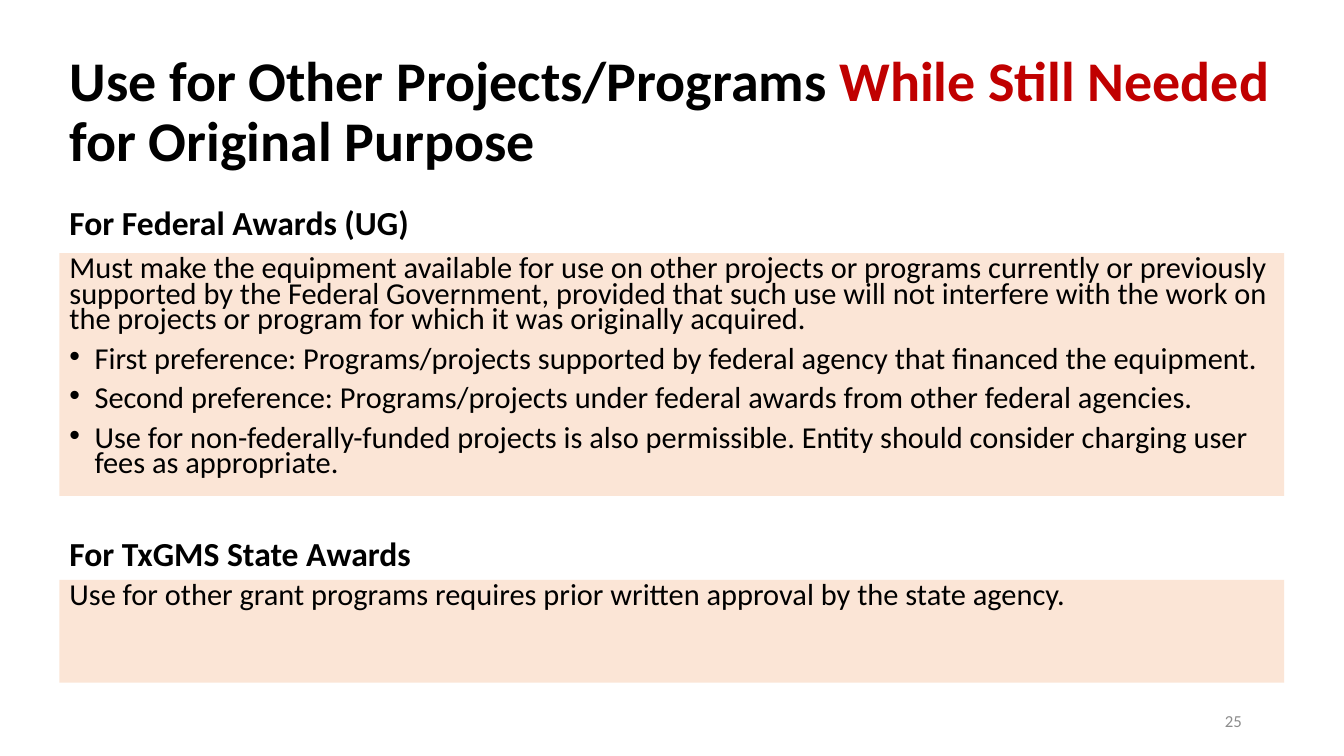
from pptx import Presentation
from pptx.dml.color import RGBColor
from pptx.enum.shapes import MSO_SHAPE as Shape
from pptx.enum.text import MSO_ANCHOR as Anchor, MSO_AUTO_SIZE as AutoSize, PP_ALIGN as Align
from pptx.oxml.ns import qn
from pptx.util import Cm, Pt
from lxml.etree import SubElement

BLACK, RED, GREY, PEACH = "000000", "C00000", "8C8C8C", "FBE5D6"
LEFT, WIDTH, HEADING_WIDTH = Cm(1.5), Cm(30.86), Cm(14.33)
INDENT = Cm(0.635)

FEDERAL_RULES = [
    "Must make the equipment available for use on other projects or programs "
    "currently or previously supported by the Federal Government, provided that "
    "such use will not interfere with the work on the projects or program for "
    "which it was originally acquired.",
    "• First preference: Programs/projects supported by federal agency that "
    "financed the equipment.",
    "• Second preference: Programs/projects under federal awards from other "
    "federal agencies.",
    "• Use for non-federally-funded projects is also permissible. Entity should "
    "consider charging user fees as appropriate.",
]
STATE_RULES = [
    "Use for other grant programs requires prior written approval by the state agency.",
]


def rgb(colour):
    return RGBColor.from_string(colour)


def add_run(paragraph, text, size=21.7, colour=BLACK, bold=False):
    run = paragraph.add_run()
    run.text = text
    run.font.name = "Calibri"
    run.font.size = Pt(size)
    run.font.bold = bold
    run.font.color.rgb = rgb(colour)


def set_bullet(paragraph):
    properties = paragraph._p.get_or_add_pPr()
    properties.set("marL", str(INDENT))
    properties.set("indent", str(-INDENT))
    SubElement(properties, qn("a:buFont")).set("typeface", "Arial")
    SubElement(properties, qn("a:buChar")).set("char", "•")


def write(frame, paragraphs, anchor=Anchor.TOP, align=Align.LEFT,
          line_spacing=1.0, space_before=0, **font):
    """Fill a frame; each paragraph is a string or a list of (text, colour)."""
    frame.word_wrap = True
    frame.auto_size = AutoSize.NONE
    frame.vertical_anchor = anchor
    for number, content in enumerate(paragraphs):
        paragraph = frame.add_paragraph() if number else frame.paragraphs[0]
        paragraph.alignment = align
        paragraph.line_spacing = line_spacing
        paragraph.space_before = Pt(space_before)
        if isinstance(content, list):
            for text, colour in content:
                add_run(paragraph, text, colour=colour, **font)
            continue
        if content.startswith("• "):
            set_bullet(paragraph)
        add_run(paragraph, content.removeprefix("• "), **font)


def add_title(slide, parts):
    title = slide.shapes.title
    title.left, title.top, title.width, title.height = LEFT, Cm(1.02), WIDTH, Cm(3.68)
    write(title.text_frame, [parts], anchor=Anchor.MIDDLE, line_spacing=0.9,
          size=40, bold=True)


def add_heading(slide, text, top, height):
    heading = slide.shapes.add_textbox(LEFT, top, HEADING_WIDTH, height)
    write(heading.text_frame, [text], anchor=Anchor.BOTTOM, line_spacing=0.9,
          space_before=10, size=24, bold=True)


def add_rules(slide, rules, top, height):
    panel = slide.shapes.add_shape(Shape.RECTANGLE, LEFT, top, WIDTH, height)
    panel.shadow.inherit = False
    panel.fill.solid()
    panel.fill.fore_color.rgb = rgb(PEACH)
    panel.line.fill.background()
    write(panel.text_frame, rules, line_spacing=0.7, space_before=10)


def add_page_number(slide, number):
    page = slide.shapes.add_textbox(Cm(23.93), Cm(17.65), Cm(7.62), Cm(1.02))
    write(page.text_frame, [number], anchor=Anchor.MIDDLE, align=Align.RIGHT,
          size=12, colour=GREY)


def main():
    deck = Presentation()
    deck.slide_width, deck.slide_height = Cm(33.87), Cm(19.05)
    slide = deck.slides.add_slide(deck.slide_layouts.get_by_name("Title Only"))

    add_title(slide, [("Use for Other Projects/Programs ", BLACK),
                      ("While Still Needed", RED),
                      (" for Original Purpose", BLACK)])

    # Federal awards
    add_heading(slide, "For Federal Awards (UG)", Cm(4.85), Cm(1.4))
    add_rules(slide, FEDERAL_RULES, Cm(6.38), Cm(6.12))

    # State awards
    add_heading(slide, "For TxGMS State Awards", Cm(13.26), Cm(1.32))
    add_rules(slide, STATE_RULES, Cm(14.61), Cm(2.59))

    add_page_number(slide, "25")
    deck.save("out.pptx")


if __name__ == "__main__":
    main()
